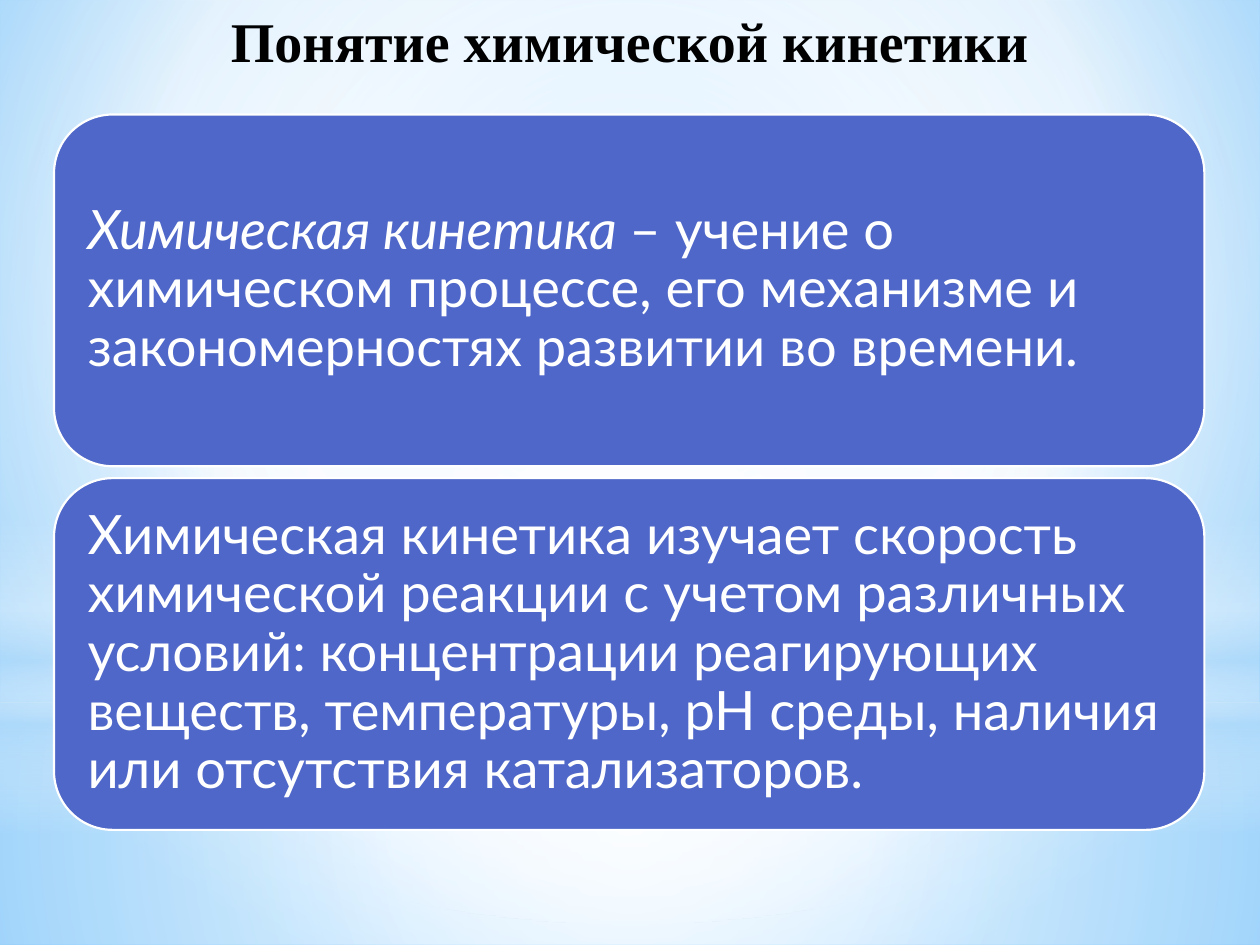
from dataclasses import dataclass
from typing import Optional

from lxml.etree import SubElement
from pptx import Presentation
from pptx.dml.color import RGBColor as Rgb
from pptx.enum.shapes import MSO_SHAPE as Kind
from pptx.enum.text import MSO_ANCHOR as Anchor, PP_ALIGN as Align
from pptx.oxml import parse_xml
from pptx.oxml.ns import nsdecls, qn
from pptx.util import Cm, Pt

WIDE, HIGH = 25.4, 19.05
WHITE, PALE = "FFFFFF", "B4DCFA"
CENTRE = (50, 50, 50, 50)


@dataclass
class Blend:
    stops: list[tuple[int, str, int]]  # place %, colour, opacity %
    focus: Optional[tuple[int, int, int, int]] = CENTRE  # None: top to bottom


@dataclass
class Glow:
    kind: Kind
    top: float
    height: float
    blend: Blend


@dataclass
class Card:
    runs: list[tuple[str, bool]]  # text, italic


SKY = Blend([(0, "9ED5FF", 100), (60, WHITE, 100), (100, "5BB9FF", 100)],
            (20, 10, 20, 60))
GLOWS = [
    Glow(Kind.RECTANGLE, 14.17, 4.88,
         Blend([(0, WHITE, 91), (37, WHITE, 76), (100, PALE, 79)])),
    Glow(Kind.RECTANGLE, 0, 14.17,
         Blend([(0, WHITE, 89), (48, WHITE, 62), (100, PALE, 79)])),
    Glow(Kind.RECTANGLE, 10.46, 6.35,
         Blend([(0, WHITE, 0), (29, WHITE, 30), (45, PALE, 40),
                (55, WHITE, 26), (65, PALE, 60), (100, WHITE, 0)], None)),
    Glow(Kind.OVAL, 4.45, 14.17,
         Blend([(0, WHITE, 100), (56, WHITE, 0)])),
]
CARDS = [
    Card([("Химическая кинетика ", True),
          ("– учение о химическом процессе, его механизме и "
           "закономерностях развитии во времени.", False)]),
    Card([("Химическая кинетика изучает скорость химической реакции "
           "с учетом различных условий: концентрации реагирующих веществ, "
           "температуры, pH среды, наличия или отсутствия катализаторов.",
           False)]),
]
CARD_LEFT, CARD_TOP, CARD_WIDE, CARD_HIGH, GAP = 1.09, 2.31, 23.19, 7.09, 0.24


def tint(code: str) -> Rgb:
    return Rgb.from_string(code)


def assign(item, values: dict) -> None:
    for name, value in values.items():
        setattr(item, name, value)


def shade(owner, fill, blend: Blend) -> None:
    """Give the owner's fill a gradient with opacity at each stop."""
    fill.solid()
    grad = parse_xml(f'<a:gradFill {nsdecls("a")} rotWithShape="1"/>')
    stops = SubElement(grad, qn("a:gsLst"))
    for place, code, alpha in blend.stops:
        stop = SubElement(stops, qn("a:gs"), pos=str(place * 1000))
        colour = SubElement(stop, qn("a:srgbClr"), val=code)
        if alpha < 100:
            SubElement(colour, qn("a:alpha"), val=str(alpha * 1000))
    if blend.focus:
        path = SubElement(grad, qn("a:path"), path="circle")
        sides = {side: str(part * 1000) for side, part in zip("ltrb", blend.focus)}
        SubElement(path, qn("a:fillToRect"), **sides)
    else:
        SubElement(grad, qn("a:lin"), ang="5400000", scaled="0")
    plain = owner.find(".//" + qn("a:solidFill"))
    plain.getparent().replace(plain, grad)


def draw_glow(slide, glow: Glow) -> None:
    shape = slide.shapes.add_shape(glow.kind, 0, Cm(glow.top), Cm(WIDE), Cm(glow.height))
    shape.shadow.inherit = False
    shape.line.fill.background()
    shade(shape.element, shape.fill, glow.blend)


def draw_card(slide, card: Card, top: float) -> None:
    shape = slide.shapes.add_shape(Kind.ROUNDED_RECTANGLE, Cm(CARD_LEFT), Cm(top),
                                   Cm(CARD_WIDE), Cm(CARD_HIGH))
    shape.shadow.inherit = False
    shape.fill.solid()
    shape.fill.fore_color.rgb = tint("4E67C8")
    shape.line.color.rgb = tint(WHITE)
    shape.line.width = Pt(1.25)
    frame = shape.text_frame
    inset = Cm(0.33)
    assign(frame, {"word_wrap": True, "vertical_anchor": Anchor.MIDDLE,
                   "margin_left": inset, "margin_right": inset,
                   "margin_top": inset, "margin_bottom": inset})
    para = frame.paragraphs[0]
    assign(para, {"alignment": Align.LEFT, "line_spacing": 0.9})
    for text, slant in card.runs:
        run = para.add_run()
        run.text = text
        assign(run.font, {"name": "Lato", "size": Pt(31), "italic": slant})
        run.font.color.rgb = tint(WHITE)


def draw_title(slide, text: str) -> None:
    title = slide.shapes.title
    assign(title, {"left": 0, "top": 0, "width": Cm(WIDE), "height": Cm(3.18)})
    frame = title.text_frame
    frame.text = text
    frame.vertical_anchor = Anchor.TOP
    para = frame.paragraphs[0]
    para.alignment = Align.CENTER
    font = para.runs[0].font
    assign(font, {"name": "Times New Roman", "size": Pt(32), "bold": True})
    font.color.rgb = tint("000000")
    # Bring the title in front of the glows
    title.element.getparent().append(title.element)


def main() -> None:
    deck = Presentation()
    assign(deck, {"slide_width": Cm(WIDE), "slide_height": Cm(HIGH)})
    slide = deck.slides.add_slide(deck.slide_layouts[5])

    # Backdrop
    shade(slide.element, slide.background.fill, SKY)
    for glow in GLOWS:
        draw_glow(slide, glow)

    # Content
    draw_title(slide, "Понятие химической кинетики")
    for row, card in enumerate(CARDS):
        draw_card(slide, card, CARD_TOP + row * (CARD_HIGH + GAP))

    deck.save("out.pptx")


if __name__ == "__main__":
    main()
